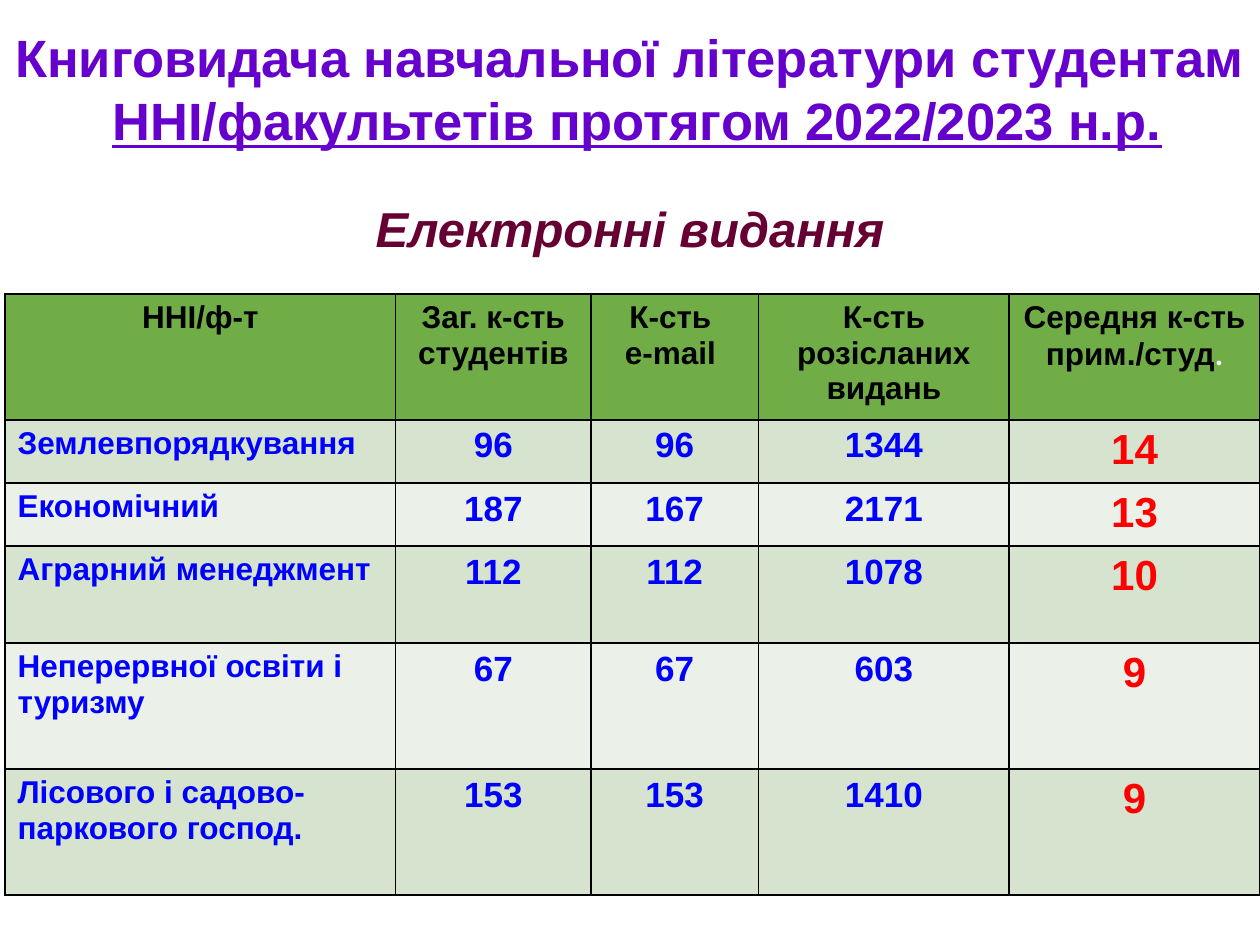
from lxml.etree import SubElement as Sub
from pptx import Presentation
from pptx.dml.color import RGBColor as Rgb
from pptx.enum.text import PP_ALIGN as Align
from pptx.oxml.ns import qn
from pptx.util import Inches, Pt

WIDE, HIGH = Inches(10), Inches(7.5)
INK = {
    "title": "6600CC", "sub": "660033", "head": "70AD47", "odd": "D5E3CF",
    "even": "EBF1E9", "black": "000000", "white": "FFFFFF",
    "blue": "0000FF", "red": "FF0000",
}
COLS = [3.1, 1.55, 1.33, 1.99, 1.99]
ROWS = [1, 0.5, 0.5, 0.77, 1, 1]
HEADS = [
    "ННІ/ф-т", "Заг. к-сть студентів", "К-сть \ne-mail ",
    "К-сть розісланих\nвидань", "Середня к-сть прим./студ",
]
DATA = [
    ("Землевпорядкування", 96, 96, 1344, 14),
    ("Економічний", 187, 167, 2171, 13),
    ("Аграрний менеджмент", 112, 112, 1078, 10),
    ("Неперервної освіти і туризму", 67, 67, 603, 9),
    ("Лісового і садово-паркового господ.", 153, 153, 1410, 9),
]


def place(x, y, w, h):
    """Turn shares of the slide into a box."""
    return int(x * WIDE), int(y * HIGH), int(w * WIDE), int(h * HIGH)


def style(para, size, ink, align=Align.CENTER):
    """Give a paragraph its bold face, size, colour and alignment."""
    para.alignment = align
    font = para.font
    font.name, font.size, font.bold = "Arial", Pt(size), True
    font.color.rgb = Rgb.from_string(INK[ink])


def add_text(slide, box, text, size, ink):
    """Add a centred line of text per row and return its paragraphs."""
    frame = slide.shapes.add_textbox(*box).text_frame
    frame.word_wrap = False
    frame.text = text
    for para in frame.paragraphs:
        style(para, size, ink)
    return frame.paragraphs


def add_title(slide, box):
    """Add the heading with its second line underlined."""
    lines = add_text(
        slide, box, "Книговидача навчальної літератури студентам\n ", 30, "title")
    run = lines[1].add_run()
    run.text = "ННІ/факультетів протягом 2022/2023 н.р."
    run.font.underline = True


def add_sub(slide, box):
    """Add the italic subheading."""
    for para in add_text(slide, box, "Електронні видання", 28, "sub"):
        para.font.italic = True


def edge(cell):
    """Draw a thin black border round a cell."""
    props = cell._tc.get_or_add_tcPr()
    for side in ("lnL", "lnR", "lnT", "lnB"):
        line = Sub(props, qn(f"a:{side}"), w=str(Pt(1)))
        fill = Sub(line, qn("a:solidFill"))
        Sub(fill, qn("a:srgbClr"), val=INK["black"])


def fill_cell(cell, text, back, size, ink, align):
    """Write, border and fill one cell."""
    edge(cell)
    cell.fill.solid()
    cell.fill.fore_color.rgb = Rgb.from_string(INK[back])
    cell.text = str(text)
    for para in cell.text_frame.paragraphs:
        style(para, size, ink, align)


def add_grid(slide, box):
    """Add the table, sharing the box among its columns and rows."""
    table = slide.shapes.add_table(len(ROWS), len(COLS), *box).table
    for col, part in zip(table.columns, COLS):
        col.width = int(box[2] * part / sum(COLS))
    for row, part in zip(table.rows, ROWS):
        row.height = int(box[3] * part / sum(ROWS))
    looks = [(18, "blue", Align.LEFT)]
    looks += [(20, "blue", Align.CENTER)] * 3
    looks += [(24, "red", Align.CENTER)]
    for c, text in enumerate(HEADS):
        fill_cell(table.cell(0, c), text, "head", 18, "black", Align.CENTER)
    for r, items in enumerate(DATA, 1):
        back = "odd" if r % 2 else "even"
        for c, (text, look) in enumerate(zip(items, looks)):
            fill_cell(table.cell(r, c), text, back, *look)
    dot = table.cell(0, len(COLS) - 1).text_frame.paragraphs[0].add_run()
    dot.text = "."
    dot.font.name = "Calibri"
    dot.font.color.rgb = Rgb.from_string(INK["white"])


def main():
    """Build and save the slide."""
    deck = Presentation()
    deck.slide_width, deck.slide_height = WIDE, HIGH
    slide = deck.slides.add_slide(deck.slide_layouts[6])
    add_title(slide, place(0, 0.02, 1, 0.15))
    add_grid(slide, place(0.004, 0.311, 0.996, 0.636))
    add_sub(slide, place(0.286, 0.204, 0.428, 0.076))
    deck.save("out.pptx")


if __name__ == "__main__":
    main()
